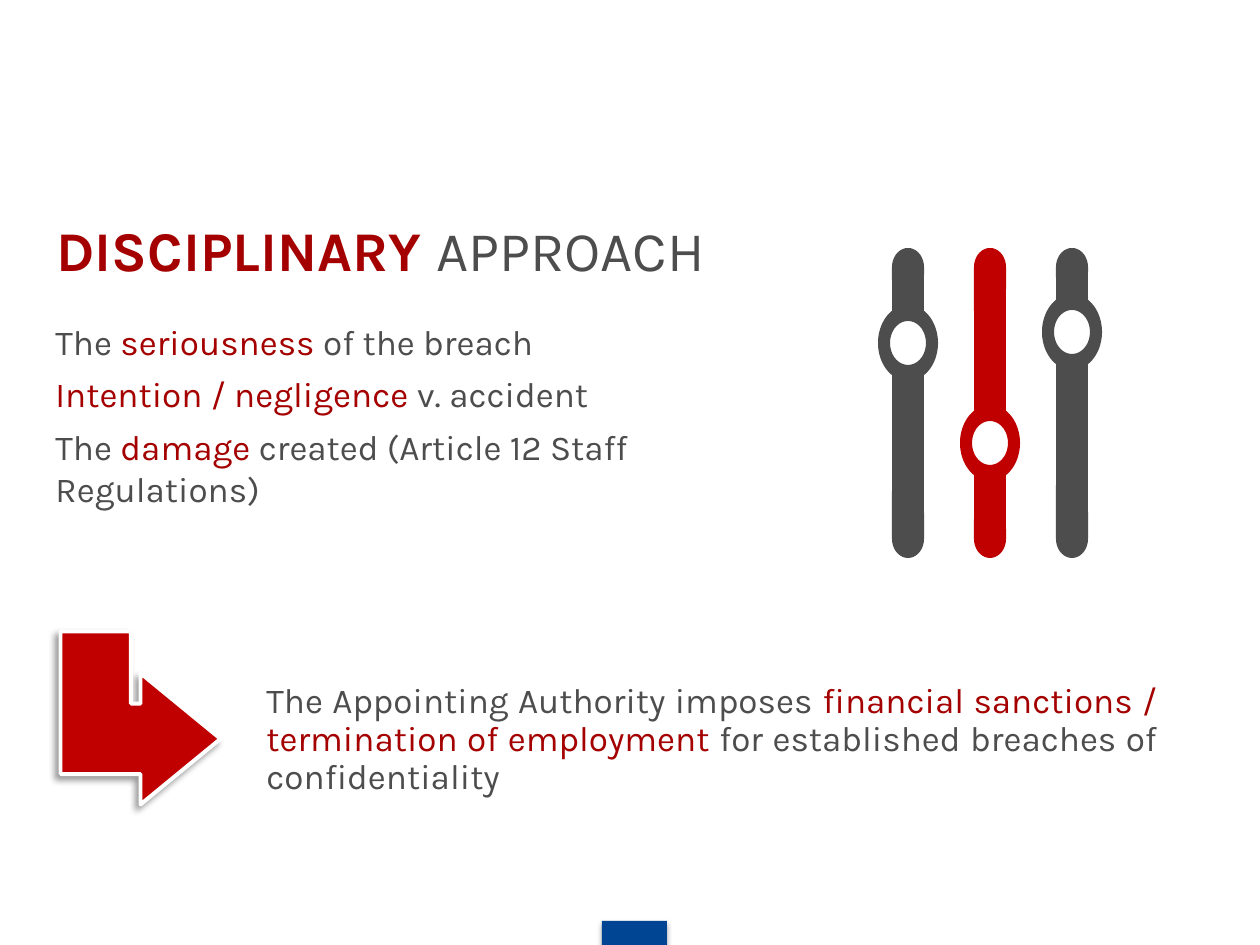
from math import cos, radians, sin

from lxml import etree
from pptx import Presentation
from pptx.dml.color import RGBColor
from pptx.enum.shapes import MSO_SHAPE as Shape
from pptx.enum.text import MSO_ANCHOR as Anchor, PP_ALIGN as Align
from pptx.oxml.ns import qn
from pptx.util import Emu, Pt

SCALE = 914400 / 126  # EMU per px
FONT = "Karla"
GREY, DARK_RED, RED, BLUE, WHITE = "4D4D4D", "A40000", "C00000", "004494", "FFFFFF"

# Content: each paragraph is a list of (text, colour) runs
TITLE = [[("DISCIPLINARY ", DARK_RED), ("APPROACH", GREY)]]
CRITERIA = [
    [("The ", GREY), ("seriousness ", DARK_RED), ("of the breach", GREY)],
    [("Intention / negligence ", DARK_RED), ("v. accident", GREY)],
    [("The ", GREY), ("damage", DARK_RED),
     (" created (Article 12 Staff Regulations)", GREY)],
]
OUTCOME = [
    [("The Appointing Authority imposes ", GREY),
     ("financial sanctions / termination of employment", DARK_RED),
     (" for established breaches of confidentiality", GREY)],
]
# Sliders: centre x, knob centre y, colour
SLIDERS = [(908, 343, GREY), (990, 443, RED), (1072, 332, GREY)]
TRACK_TOP, TRACK_BOTTOM = 248, 558
CAP = (16, 19)  # radii of the rounded track ends
KNOB = (30, 38)
HOLE = (18, 22)


def px(value):
    return Emu(round(value * SCALE))


def colour(hex_code):
    return RGBColor.from_string(hex_code)


def add_text(slide, paragraphs, at, size=20, anchor=Anchor.TOP, align=Align.LEFT,
             space=0, line=None, bold_colour=None):
    box = slide.shapes.add_textbox(*map(px, at))
    frame = box.text_frame
    frame.word_wrap = True
    frame.vertical_anchor = anchor
    for index, runs in enumerate(paragraphs):
        para = frame.paragraphs[0] if index == 0 else frame.add_paragraph()
        para.alignment = align
        para.line_spacing = line
        para.space_before = Pt(space if index else 0)
        for text, hex_code in runs:
            span = para.add_run()
            span.text = text
            span.font.name = FONT
            span.font.size = Pt(size)
            span.font.bold = hex_code == bold_colour
            span.font.color.rgb = colour(hex_code)


def paint(shape, fill):
    shape.shadow.inherit = False
    shape.fill.solid()
    shape.fill.fore_color.rgb = colour(fill)
    shape.line.fill.background()


def add_shadow(shape, alpha, blur, distance, angle):
    effects = shape._element.spPr.find(qn("a:effectLst"))
    outer = etree.SubElement(effects, qn("a:outerShdw"), blurRad=str(Pt(blur)),
                             dist=str(Pt(distance)), dir=str(angle * 60000),
                             rotWithShape="0")
    tone = etree.SubElement(outer, qn("a:srgbClr"), val="000000")
    etree.SubElement(tone, qn("a:alpha"), val=str(alpha * 1000))


def arc(x, y, radii, start, end, step=10):
    """Points on an ellipse, clockwise from the right, angles in degrees."""
    return [(px(x + radii[0] * cos(radians(angle))),
             px(y + radii[1] * sin(radians(angle))))
            for angle in range(start, end + 1, step)]


def add_slider(slide, x, knob_y, fill):
    outline = (arc(x, TRACK_TOP + CAP[1], CAP, 180, 360)
               + arc(x, knob_y, KNOB, -58, 58, 4)
               + arc(x, TRACK_BOTTOM - CAP[1], CAP, 0, 180)
               + arc(x, knob_y, KNOB, 122, 238, 4))
    hole = arc(x, knob_y, HOLE, 0, 360)[::-1]
    builder = slide.shapes.build_freeform(*outline[0])
    builder.add_line_segments(outline[1:], close=True)
    builder.move_to(*hole[0])
    builder.add_line_segments(hole[1:], close=True)
    paint(builder.convert_to_shape(), fill)


def main():
    deck = Presentation()
    deck.slide_width, deck.slide_height = px(1260), px(945)
    page = deck.slides.add_slide(deck.slide_layouts[6])

    # Footer tab
    tab = page.shapes.add_shape(Shape.RECTANGLE, *map(px, (602, 921, 65, 28)))
    paint(tab, BLUE)
    add_shadow(tab, 35, 3.1, 1.8, 90)

    # Title and texts
    add_text(page, TITLE, (44, 185, 1091, 129), size=32, anchor=Anchor.MIDDLE,
             bold_colour=DARK_RED)
    add_text(page, CRITERIA, (43, 314, 697, 224), space=6)
    add_text(page, OUTCOME, (254, 677, 916, 132), align=Align.JUSTIFY, line=0.9)

    # Arrow to the outcome
    arrow = page.shapes.add_shape(Shape.BENT_UP_ARROW, *map(px, (54, 638, 173, 160)))
    arrow.rotation = 90
    for index, value in enumerate((0.44, 0.41, 0.5)):
        arrow.adjustments[index] = value
    paint(arrow, RED)
    arrow.line.color.rgb = colour(WHITE)
    arrow.line.width = Pt(2.25)
    add_shadow(arrow, 40, 4, 3, 135)

    # Slider icon
    for x, knob_y, fill in SLIDERS:
        add_slider(page, x, knob_y, fill)

    deck.save("out.pptx")


if __name__ == "__main__":
    main()
